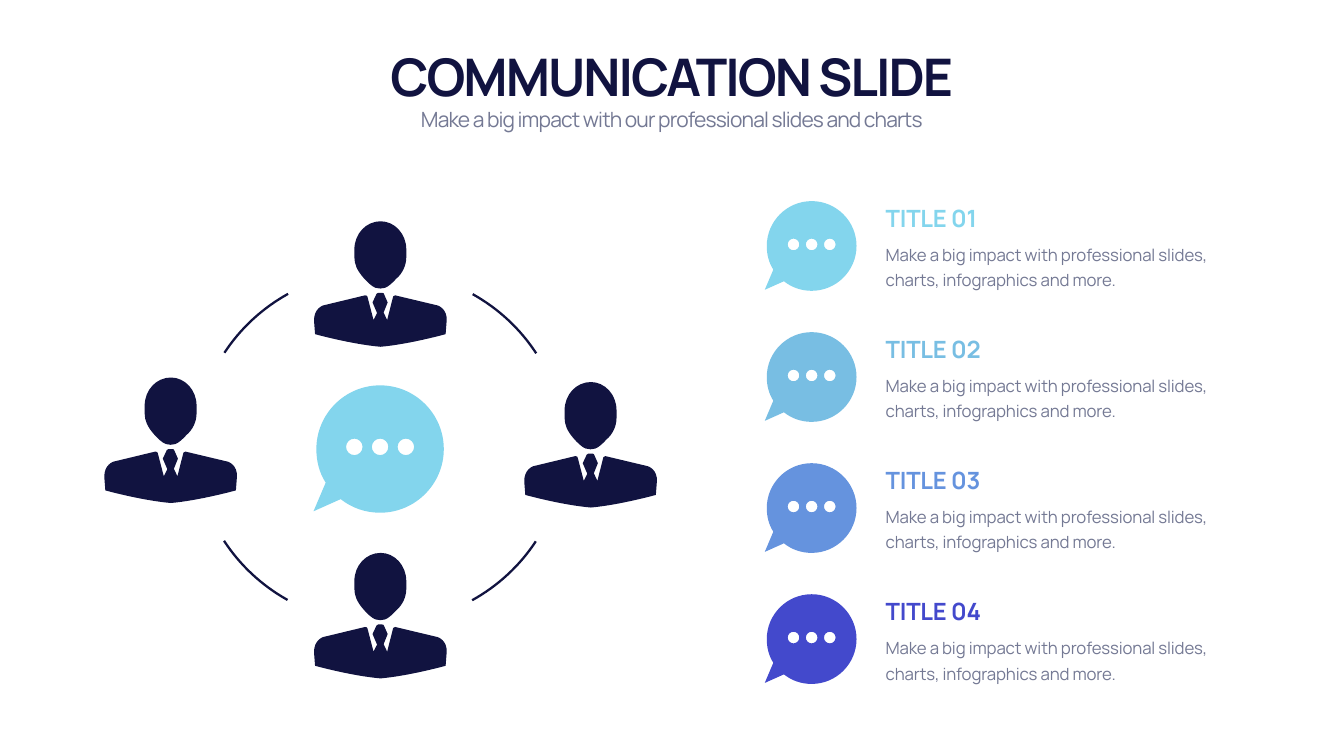
from pptx import Presentation
from pptx.dml.color import RGBColor
from pptx.enum.shapes import MSO_SHAPE
from pptx.enum.text import MSO_ANCHOR, MSO_AUTO_SIZE, PP_ALIGN
from pptx.oxml.ns import qn
from pptx.util import Pt

PX = 9144  # EMU per px, 100 px to the inch
ARC = MSO_SHAPE.ARC
TOP, BOTTOM = MSO_ANCHOR.TOP, MSO_ANCHOR.BOTTOM
LEFT, CENTER = PP_ALIGN.LEFT, PP_ALIGN.CENTER
GROW = MSO_AUTO_SIZE.SHAPE_TO_FIT_TEXT
FONT = "Manrope"

COLORS = {"navy": "111340", "gray": "747994", "sky": "83D5ED",
          "blue": "78BEE3", "denim": "6593DE", "indigo": "4349CC"}

ITEMS = [("TITLE 01", "sky"), ("TITLE 02", "blue"),
         ("TITLE 03", "denim"), ("TITLE 04", "indigo")]
ITEM_TEXT = "Make a big impact with professional slides, charts, infographics and more."
ITEM_PITCH = 260

# Left and top of each person around the ring
PEOPLE = [(623, 439), (623, 1097), (207, 749), (1040, 758)]

# Outlines in px: a pair is a line's end, six numbers are a Bezier curve
SUIT = [(127, 142), (135, 142), (137, 142, 139, 143, 139, 145), (146, 161),
        (138, 181), (145, 196), (157, 149), (158, 147, 159, 147, 161, 147),
        (245, 167), (245, 167, 265, 173, 263, 198), (261, 224),
        (261, 224, 189, 244, 132, 249), (74, 244, 2, 224, 2, 224), (0, 198),
        (-1, 173, 18, 167, 18, 167), (101, 147),
        (104, 147, 106, 148, 106, 150), (118, 196), (125, 182), (116, 161),
        (124, 144), (124, 142, 126, 142, 127, 142)]
HEAD = [(132, 0), (160, 0, 183, 25, 183, 56), (183, 71),
        (183, 88, 175, 104, 163, 114), (157, 121, 147, 130, 141, 132),
        (135, 134, 128, 134, 122, 132), (115, 130, 104, 119, 98, 112),
        (85, 97, 80, 85, 80, 71), (80, 56), (80, 25, 103, 0, 132, 0)]
BALLOON = [(0, -89), (-49, -89, -89, -49, -89, 0), (-89, 17, -85, 33, -76, 47),
           (-93, 87), (-55, 70), (-40, 82, -21, 89, 0, 89),
           (49, 89, 89, 49, 89, 0), (89, -49, 49, -89, 0, -89)]


def rgb(name):
    return RGBColor.from_string(COLORS[name])


def dot(cx, cy=-3, r=11.5, k=6.35):
    """Outline of a circle made of four Bezier curves."""
    return [(cx + r, cy),
            (cx + r, cy + k, cx + k, cy + r, cx, cy + r),
            (cx - k, cy + r, cx - r, cy + k, cx - r, cy),
            (cx - r, cy - k, cx - k, cy - r, cx, cy - r),
            (cx + k, cy - r, cx + r, cy - k, cx + r, cy)]


def bend_curves(sp, outlines):
    """Merge the three segments that stand for each curve into one Bezier."""
    lines = iter(list(sp._element.iter(qn("a:lnTo"))))
    for outline in outlines:
        for seg in outline[1:]:
            first = next(lines)
            if len(seg) == 6:
                first.tag = qn("a:cubicBezTo")
                for _ in range(2):
                    line = next(lines)
                    line.getparent().remove(line)
                    first.append(line[0])


def add_outline(s, outlines, x, y, color, scale=1):
    """Draw closed outlines as one filled shape with its origin at x, y."""
    builder = None
    for outline in outlines:
        points = [((x + scale * seg[i]) * PX, (y + scale * seg[i + 1]) * PX)
                  for seg in outline for i in range(0, len(seg), 2)]
        if builder is None:
            builder = s.shapes.build_freeform(*points[0])
        else:
            builder.move_to(*points[0])
        builder.add_line_segments(points[1:], close=True)
    sp = builder.convert_to_shape()
    bend_curves(sp, outlines)
    sp.shadow.inherit = False
    sp.fill.solid()
    sp.fill.fore_color.rgb = rgb(color)
    sp.line.fill.background()


def add_bubble(s, cx, cy, color, scale=1):
    dots = [dot(x) for x in (-36, 0, 36)]
    add_outline(s, [BALLOON] + dots, cx, cy, color, scale)


def add_ring_arc(s, turn):
    w, h = (702, 730) if turn % 2 else (730, 702)
    sp = s.shapes.add_shape(ARC, (754 - w // 2) * PX, (887 - h // 2) * PX, w * PX, h * PX)
    for i, degrees in enumerate((121.19, 149.01)):
        sp.adjustments[i] = degrees * 0.6  # 60000ths of a degree over 100000
    sp.rotation = 90 * turn
    sp.shadow.inherit = False
    sp.fill.background()
    sp.line.color.rgb = rgb("navy")
    sp.line.width = Pt(3.25)


def set_text(sp, box, text, size, color, spacing, bold=False, align=LEFT,
             anchor=TOP, line=None):
    sp.left, sp.top, sp.width, sp.height = (v * PX for v in box)
    tf = sp.text_frame
    tf.word_wrap = True
    tf.auto_size = GROW
    tf.vertical_anchor = anchor
    p = tf.paragraphs[0]
    p.text = text
    p.alignment = align
    p.space_before = Pt(0)
    if line:
        p.line_spacing = Pt(line)
    p.font.name = FONT
    p.font.size = Pt(size)
    p.font.bold = bold
    p.font.color.rgb = rgb(color)
    # Letter spacing in hundredths of a point
    p.runs[0]._r.get_or_add_rPr().set("spc", str(spacing))


def add_text(s, box, *args, **kwargs):
    set_text(s.shapes.add_textbox(0, 0, 0, 0), box, *args, **kwargs)


def main():
    prs = Presentation()
    prs.slide_width, prs.slide_height = 2666 * PX, 1500 * PX
    s = prs.slides.add_slide(prs.slide_layouts[0])

    # Heading
    set_text(s.shapes.title, (166, 82, 2333, 135), "COMMUNICATION SLIDE",
             74, "navy", -290, bold=True, align=CENTER, anchor=BOTTOM)
    set_text(s.placeholders[1], (166, 207, 2333, 61),
             "Make a big impact with our professional slides and charts",
             30, "gray", -120, align=CENTER)

    # Ring of people around a speech bubble
    for x, y in PEOPLE:
        add_outline(s, [SUIT, HEAD], x, y, "navy")
    add_bubble(s, 754, 891, "sky", scale=1.42)
    for turn in range(4):
        add_ring_arc(s, turn)

    # List of titled items
    for i, (title, color) in enumerate(ITEMS):
        y = i * ITEM_PITCH
        add_bubble(s, 1610, 488 + y, color)
        add_text(s, (1747, 399 + y, 723, 67), title, 34, color, -30,
                 bold=True, anchor=BOTTOM)
        add_text(s, (1747, 471 + y, 723, 109), ITEM_TEXT, 24, "gray", -20, line=36)

    prs.save("out.pptx")


if __name__ == "__main__":
    main()
